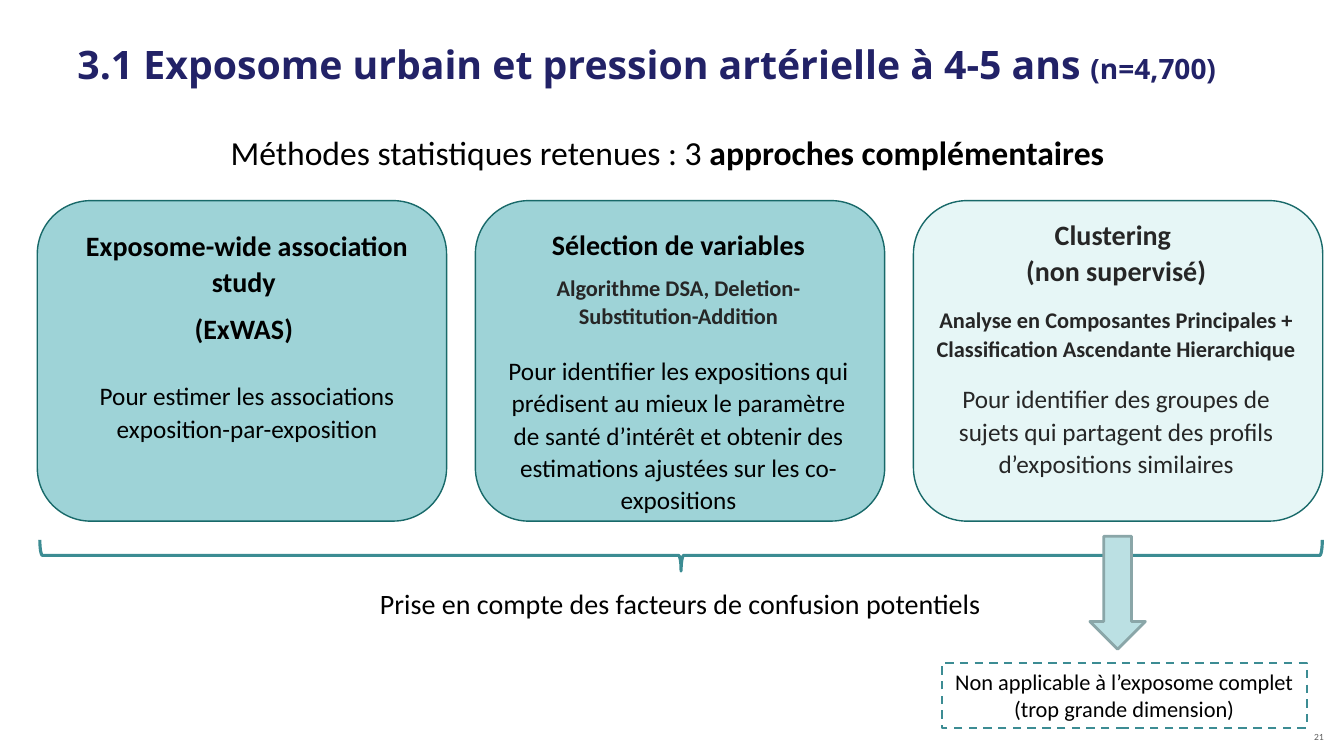
from dataclasses import dataclass

from pptx import Presentation
from pptx import util as u
from pptx.dml.color import RGBColor
from pptx.enum import dml, shapes, text


@dataclass(frozen=True)
class Theme:
    body_font: str = "Calibri"
    heading_font: str = "Open Sans"
    number_font: str = "Lato"
    black: str = "000000"
    dark: str = "262626"
    gray: str = "595959"
    navy: str = "222267"
    teal: str = "9ED3D7"
    pale: str = "E6F6F6"
    card_line: str = "186969"
    accent: str = "3C8C93"
    arrow_fill: str = "BBE0E3"
    arrow_line: str = "8AA6A8"
    heading: int = 28
    title: int = 24
    large: int = 20
    body: int = 18
    small: int = 16
    number: int = 6
    line_spacing: float = 1.07


class SlideBuilder:
    def __init__(self, slide, theme):
        self.slide = slide
        self.theme = theme

    def run(self, paragraph, words, size, color=None, bold=False, font=None):
        run = paragraph.add_run()
        run.text = words
        run.font.name = font or self.theme.body_font
        run.font.size = u.Pt(size)
        run.font.bold = bold
        run.font.color.rgb = RGBColor.from_string(color or self.theme.black)

    def frame(self, shape, anchor=text.MSO_ANCHOR.TOP, wrap=True):
        frame = shape.text_frame
        frame.auto_size = text.MSO_AUTO_SIZE.NONE
        frame.word_wrap = wrap
        frame.vertical_anchor = anchor
        return frame

    def text_box(self, box, anchor=text.MSO_ANCHOR.TOP, wrap=True):
        shape = self.slide.shapes.add_textbox(*map(u.Inches, box))
        return self.frame(shape, anchor, wrap)

    def title(self, box, runs):
        shape = self.slide.shapes.title
        shape.left, shape.top, shape.width, shape.height = map(u.Inches, box)
        paragraph = self.frame(shape, text.MSO_ANCHOR.MIDDLE).paragraphs[0]
        paragraph.alignment = text.PP_ALIGN.CENTER
        for words, bold in runs:
            self.run(paragraph, words, self.theme.title, bold=bold)

    def shape(self, kind, box, line, width, fill=None):
        shape = self.slide.shapes.add_shape(kind, *map(u.Inches, box))
        shape.shadow.inherit = False
        if fill:
            shape.fill.solid()
            shape.fill.fore_color.rgb = RGBColor.from_string(fill)
        else:
            shape.fill.background()
        shape.line.color.rgb = RGBColor.from_string(line)
        shape.line.width = u.Pt(width)
        return shape

    def card_text(self, box, after, lines):
        """Each line is (words, size, colour, bold, space before)."""
        frame = self.text_box(box)
        for index, (words, size, color, bold, before) in enumerate(lines):
            paragraph = frame.add_paragraph() if index else frame.paragraphs[0]
            paragraph.alignment = text.PP_ALIGN.CENTER
            paragraph.line_spacing = self.theme.line_spacing
            paragraph.space_before = u.Pt(before)
            paragraph.space_after = u.Pt(after)
            self.run(paragraph, words, size, color, bold)


def main():
    theme = Theme()
    presentation = Presentation()
    presentation.slide_width = u.Inches(13.33)
    presentation.slide_height = u.Inches(7.5)
    slide = presentation.slides.add_slide(presentation.slide_layouts[5])
    builder = SlideBuilder(slide, theme)
    preset = shapes.MSO_SHAPE

    # Section heading and title
    heading = builder.text_box((0.67, 0.01, 12, 1.25), text.MSO_ANCHOR.MIDDLE).paragraphs[0]
    for words, size in (("3.1 Exposome urbain et pression artérielle à 4-5 ans ", theme.heading),
                        ("(n=4,700)", theme.large)):
        builder.run(heading, words, size, theme.navy, True, theme.heading_font)
    builder.title((0.35, 1.3, 12.54, 0.41),
                  [("Méthodes statistiques retenues : 3 ", False),
                   ("approches complémentaires", True)])

    # Three approaches: card fill, text area, space after, lines
    cards = [
        (theme.teal, (0.67, 2.19, 3.56, 2.58), 8, [
            ("Exposome-wide association study ", theme.large, theme.black, True, 0),
            ("(ExWAS) ", theme.large, theme.black, True, 0),
            ("Pour estimer les associations exposition-par-exposition",
             theme.body, theme.black, False, 16)]),
        (theme.teal, (4.93, 2.18, 3.6, 3), 8, [
            ("Sélection de variables", theme.large, theme.black, True, 0),
            ("Algorithme DSA, Deletion-Substitution-Addition",
             theme.small, theme.dark, True, 0),
            ("Pour identifier les expositions qui prédisent au mieux le paramètre de santé "
             "d’intérêt et obtenir des estimations ajustées sur les co-expositions",
             theme.body, theme.black, False, 9)]),
        (theme.pale, (9.17, 2.09, 3.8, 2.66), 0, [
            ("Clustering ", theme.large, theme.dark, True, 0),
            ("(non supervisé)", theme.large, theme.dark, True, 0),
            ("Analyse en Composantes Principales + Classification Ascendante Hierarchique",
             theme.small, theme.dark, True, 12),
            ("Pour identifier des groupes de sujets qui partagent des profils "
             "d’expositions similaires", theme.body, theme.dark, False, 14)]),
    ]
    card_left, card_pitch = 0.37, 4.345
    for index, (fill, area, after, lines) in enumerate(cards):
        box = (card_left + index * card_pitch, 1.99, 4.06, 3.18)
        builder.shape(preset.ROUNDED_RECTANGLE, box, theme.card_line, 1, fill)
        builder.card_text(area, after, lines)

    # Brace and shared remark
    brace = builder.shape(preset.RIGHT_BRACE, (6.6, -0.85, 0.31, 12.72), theme.accent, 2.25)
    brace.rotation = 90
    remark = builder.text_box((3.67, 5.75, 6.22, 0.45), wrap=False).paragraphs[0]
    remark.alignment = text.PP_ALIGN.JUSTIFY
    remark.line_spacing = theme.line_spacing
    builder.run(remark, "Prise en compte des facteurs de confusion potentiels", theme.large)

    # Arrow to the limitation of clustering
    builder.shape(preset.DOWN_ARROW, (10.81, 5.32, 0.55, 1.12),
                  theme.arrow_line, 2, theme.arrow_fill)
    limitation = builder.shape(preset.RECTANGLE, (9.34, 6.58, 3.62, 0.64), theme.accent, 1.5)
    limitation.line.dash_style = dml.MSO_LINE.DASH
    paragraph = builder.frame(limitation, text.MSO_ANCHOR.MIDDLE).paragraphs[0]
    paragraph.alignment = text.PP_ALIGN.CENTER
    builder.run(paragraph, "Non applicable à l’exposome complet (trop grande dimension)",
                theme.small)

    # Slide number
    number = builder.text_box((12.38, 7.21, 0.85, 0.52)).paragraphs[0]
    number.alignment = text.PP_ALIGN.RIGHT
    builder.run(number, "21", theme.number, theme.gray, font=theme.number_font)

    presentation.save("out.pptx")


if __name__ == "__main__":
    main()
